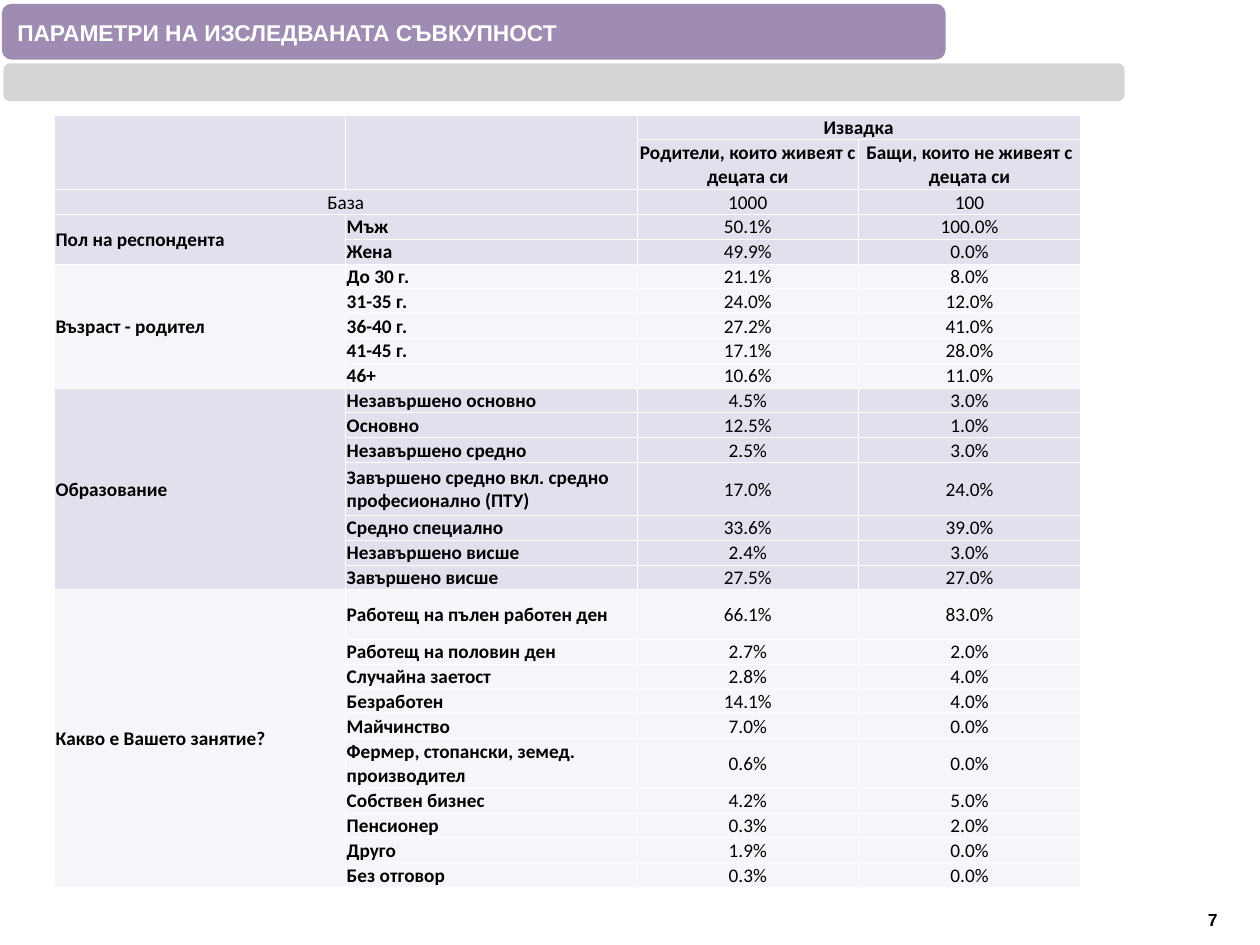
"""Build the slide with the make-up of the survey sample."""
from dataclasses import dataclass
from typing import NamedTuple

from lxml import etree
from pptx import Presentation
from pptx.dml.color import RGBColor
from pptx.enum.shapes import MSO_SHAPE
from pptx.enum.text import MSO_ANCHOR, PP_ALIGN
from pptx.oxml.ns import qn
from pptx.util import Cm, Pt

BAR = MSO_SHAPE.FLOWCHART_ALTERNATE_PROCESS
MIDDLE = MSO_ANCHOR.MIDDLE
TOP = MSO_ANCHOR.TOP
LEFT = PP_ALIGN.LEFT
CENTER = PP_ALIGN.CENTER


@dataclass(frozen=True)
class Theme:
    purple: str = "9E8CB3"
    grey: str = "D5D5D5"
    dark: str = "E4DFEC"
    light: str = "F7F5F9"
    white: str = "FFFFFF"
    black: str = "000000"
    head: str = "Arial"
    body: str = "Calibri"
    title: float = 13
    cell: float = 11
    page: float = 10
    rule: float = 0.5
    edge: float = 0.75


class Box(NamedTuple):
    left: float
    top: float
    width: float
    height: float


class Row(NamedTuple):
    label: str
    home: str
    away: str
    height: float = 0.5


class Group(NamedTuple):
    name: str
    fill: str
    rows: list[Row]


THEME = Theme()
COLS = [5.87, 5.87, 4.47, 4.47]
HEADS = [0.5, 1, 0.5]
GROUPS = [
    Group("Пол на респондента", THEME.dark, [
        Row("Мъж", "50.1%", "100.0%"),
        Row("Жена", "49.9%", "0.0%"),
    ]),
    Group("Възраст - родител", THEME.light, [
        Row("До 30 г.", "21.1%", "8.0%"),
        Row("31-35 г.", "24.0%", "12.0%"),
        Row("36-40 г.", "27.2%", "41.0%"),
        Row("41-45 г.", "17.1%", "28.0%"),
        Row("46+", "10.6%", "11.0%"),
    ]),
    Group("Образование", THEME.dark, [
        Row("Незавършено основно", "4.5%", "3.0%"),
        Row("Основно", "12.5%", "1.0%"),
        Row("Незавършено средно", "2.5%", "3.0%"),
        Row("Завършено средно вкл. средно професионално (ПТУ)", "17.0%", "24.0%", 1.07),
        Row("Средно специално", "33.6%", "39.0%"),
        Row("Незавършено висше", "2.4%", "3.0%"),
        Row("Завършено висше", "27.5%", "27.0%"),
    ]),
    Group("Какво е Вашето занятие?", THEME.light, [
        Row("Работещ на пълен работен ден", "66.1%", "83.0%", 1),
        Row("Работещ на половин ден", "2.7%", "2.0%"),
        Row("Случайна заетост", "2.8%", "4.0%"),
        Row("Безработен", "14.1%", "4.0%"),
        Row("Майчинство", "7.0%", "0.0%"),
        Row("Фермер, стопански, земед. производител", "0.6%", "0.0%", 1),
        Row("Собствен бизнес", "4.2%", "5.0%"),
        Row("Пенсионер", "0.3%", "2.0%"),
        Row("Друго", "1.9%", "0.0%"),
        Row("Без отговор", "0.3%", "0.0%"),
    ]),
]


def place(box: Box) -> list[Cm]:
    return [Cm(size) for size in box]


def write(frame, text: str, *, font: str = THEME.body, size: float = THEME.cell,
          color: str = THEME.black, bold: bool = True, align=LEFT) -> None:
    para = frame.paragraphs[0]
    para.alignment = align
    run = para.add_run()
    run.text = text
    run.font.name = font
    run.font.size = Pt(size)
    run.font.bold = bold
    run.font.color.rgb = RGBColor.from_string(color)


def draw_bar(slide, box: Box, fill: str, line: str | None = None) -> None:
    bar = slide.shapes.add_shape(BAR, *place(box))
    bar.shadow.inherit = False
    bar.fill.solid()
    bar.fill.fore_color.rgb = RGBColor.from_string(fill)
    if line:
        bar.line.color.rgb = RGBColor.from_string(line)
        bar.line.width = Pt(THEME.edge)
    else:
        bar.line.fill.background()


def draw_text(slide, box: Box, text: str, *, wrap: bool, anchor, **style) -> None:
    frame = slide.shapes.add_textbox(*place(box)).text_frame
    frame.word_wrap = wrap
    frame.vertical_anchor = anchor
    write(frame, text, font=THEME.head, **style)


def style_cell(cell, fill: str) -> None:
    cell.margin_left = cell.margin_right = cell.margin_top = Cm(0.02)
    cell.margin_bottom = 0
    cell.vertical_anchor = MIDDLE
    props = cell._tc.get_or_add_tcPr()
    for side in ("lnL", "lnR", "lnT", "lnB"):
        line = etree.SubElement(props, qn(f"a:{side}"), w=str(Pt(THEME.rule)))
        paint = etree.SubElement(line, qn("a:solidFill"))
        etree.SubElement(paint, qn("a:srgbClr"), val=THEME.white)
    cell.fill.solid()
    cell.fill.fore_color.rgb = RGBColor.from_string(fill)
    end = etree.SubElement(cell.text_frame.paragraphs[0]._p, qn("a:endParaRPr"))
    end.set("sz", str(THEME.cell * 100))


def draw_table(slide, left: float, top: float) -> None:
    rows = [row for group in GROUPS for row in group.rows]
    sizes = HEADS + [row.height for row in rows]
    fills = [THEME.dark] * len(HEADS)
    fills += [group.fill for group in GROUPS for _ in group.rows]
    box = Box(left, top, sum(COLS), sum(sizes))
    table = slide.shapes.add_table(len(sizes), len(COLS), *place(box)).table
    table.first_row = table.horz_banding = False
    for col, width in zip(table.columns, COLS):
        col.width = Cm(width)
    for line, height, fill in zip(table.rows, sizes, fills):
        line.height = Cm(height)
        for cell in line.cells:
            style_cell(cell, fill)

    def put(row: int, col: int, text: str, **style) -> None:
        write(table.cell(row, col).text_frame, text, **style)

    def merge(row: int, col: int, down: int, across: int) -> None:
        table.cell(row, col).merge(table.cell(row + down - 1, col + across - 1))

    merge(0, 0, 2, 1)
    merge(0, 1, 2, 1)
    merge(0, 2, 1, 2)
    merge(2, 0, 1, 2)
    put(0, 2, "Извадка", align=CENTER)
    put(1, 2, "Родители, които живеят с децата си", align=CENTER)
    put(1, 3, "Бащи, които не живеят с децата си", align=CENTER)
    for col, text in ((0, "База"), (2, "1000"), (3, "100")):
        put(2, col, text, bold=False, align=CENTER)
    start = len(HEADS)
    for group in GROUPS:
        merge(start, 0, len(group.rows), 1)
        put(start, 0, group.name)
        for index, row in enumerate(group.rows, start):
            put(index, 1, row.label)
            put(index, 2, row.home, bold=False, align=CENTER)
            put(index, 3, row.away, bold=False, align=CENTER)
        start += len(group.rows)


def main() -> None:
    deck = Presentation()
    deck.slide_width, deck.slide_height = Cm(25.4), Cm(19.05)
    slide = deck.slides.add_slide(deck.slide_layouts[6])
    draw_text(slide, Box(24.1, 18.2, 0.95, 0.68), "7", wrap=False, anchor=TOP,
              size=THEME.page)
    draw_bar(slide, Box(0.05, 0.09, 19, 1.1), THEME.purple, THEME.purple)
    draw_bar(slide, Box(0.07, 1.28, 22.6, 0.76), THEME.grey)
    draw_text(slide, Box(0.1, 0.21, 22.3, 0.9), "ПАРАМЕТРИ НА ИЗСЛЕДВАНАТА СЪВКУПНОСТ",
              wrap=True, anchor=MIDDLE, size=THEME.title, color=THEME.white)
    draw_table(slide, 1.1, 2.32)
    deck.save("out.pptx")


if __name__ == "__main__":
    main()
